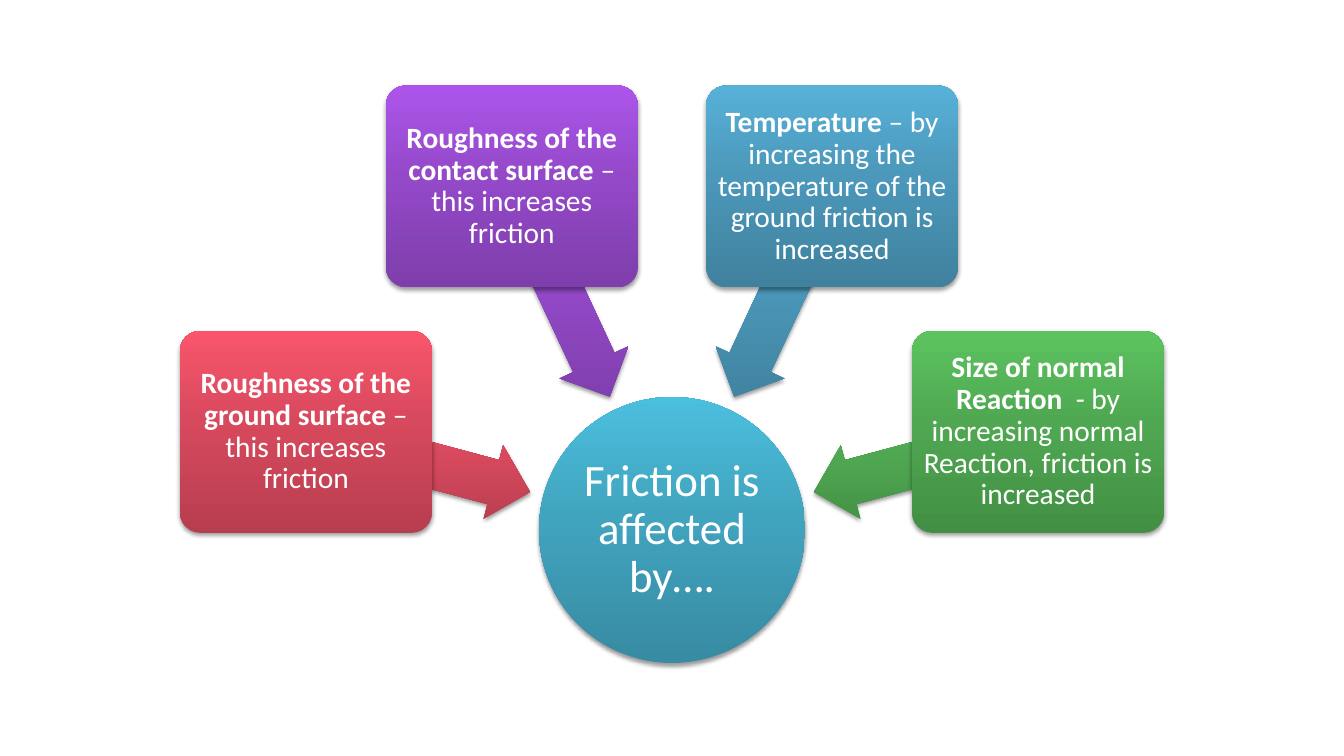
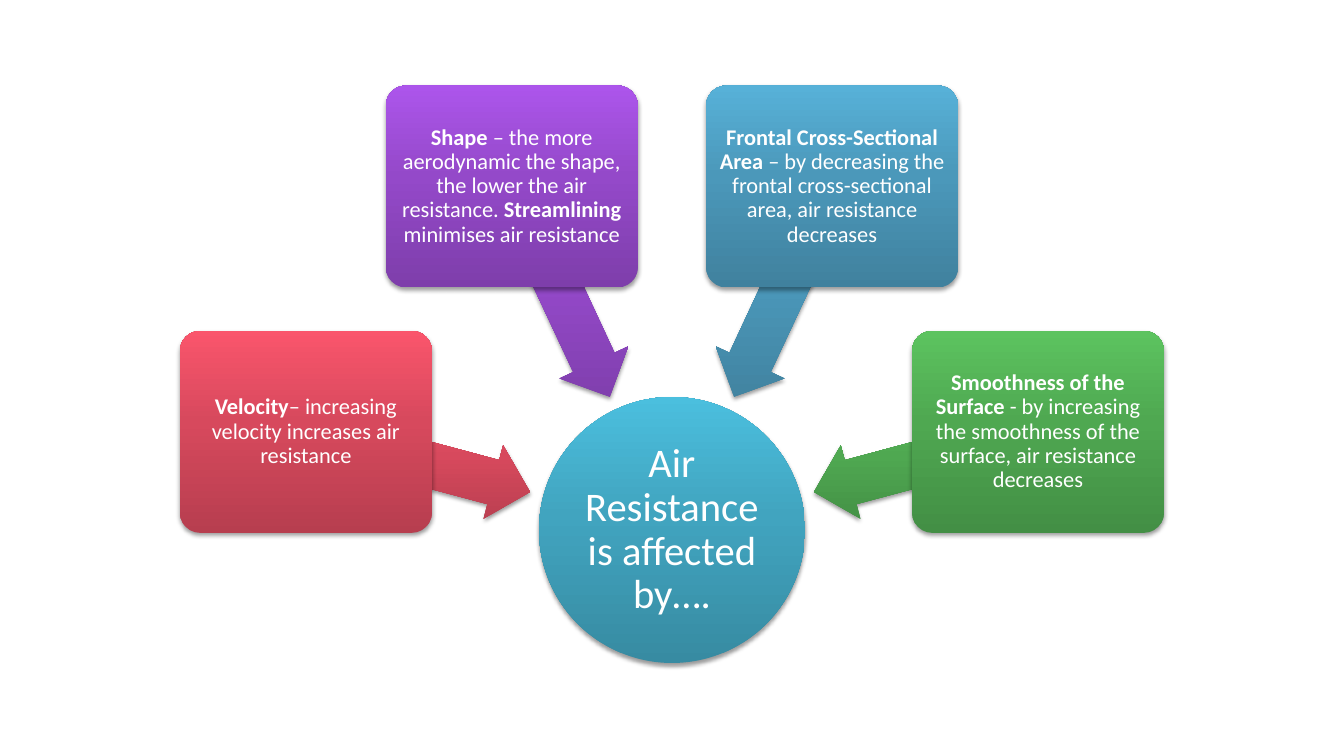
"""Builds two radial diagrams of what affects friction and air resistance."""
import copy
import math

import pptx
import pptx.dml.color
import pptx.enum.shapes
import pptx.enum.text
import pptx.oxml
import pptx.oxml.ns
import pptx.util

RGB = pptx.dml.color.RGBColor
SHAPE = pptx.enum.shapes.MSO_SHAPE
qn = pptx.oxml.ns.qn

PX = 914400 / 100.8
FONT = "Calibri"
WHITE = RGB(0xFF, 0xFF, 0xFF)
TEAL = (RGB(0x37, 0x8B, 0xA2), RGB(0x41, 0xA4, 0xBF), RGB(0x4B, 0xBF, 0xDE))
RED = (RGB(0xB7, 0x3E, 0x4F), RGB(0xD7, 0x49, 0x5D), RGB(0xFA, 0x55, 0x6C))
PURPLE = (RGB(0x7E, 0x3E, 0xAB), RGB(0x94, 0x49, 0xC9), RGB(0xAC, 0x55, 0xEB))
BLUE = (RGB(0x40, 0x81, 0x9E), RGB(0x4B, 0x98, 0xBA), RGB(0x57, 0xB1, 0xD8))
GREEN = (RGB(0x43, 0x8F, 0x45), RGB(0x4F, 0xA8, 0x51), RGB(0x5C, 0xC3, 0x5F))
STOPS = (0, 0.55, 1)
SHADOW = (
    f'<a:outerShdw {pptx.oxml.ns.nsdecls("a")} blurRad="{pptx.util.Pt(3.1)}" '
    f'dist="{pptx.util.Pt(2)}" dir="5400000" rotWithShape="0">'
    '<a:srgbClr val="000000"><a:alpha val="38000"/></a:srgbClr></a:outerShdw>'
)

HUB_X, HUB_Y, HUB_SIZE = 672, 530, 266
BOX_W, BOX_H, BOX_RADIUS = 252, 202, 379
ARROW_W, ARROW_H, ARROW_RADIUS = 232, 76, 263
SPOKES = ((195, RED), (245, PURPLE), (295, BLUE), (345, GREEN))

DIAGRAMS = [
    {
        "hub": "Friction is affected by….", "hub_size": 32,
        "size": 21, "inset": 4,
        "factors": [
            ("Roughness of the ground surface ", "– this increases friction"),
            ("Roughness of the contact surface ", "– this increases friction"),
            ("Temperature", " – by increasing the temperature of the ground "
             "friction is increased"),
            ("Size of normal Reaction ", " - by increasing normal Reaction, "
             "friction is increased"),
        ],
    },
    {
        "hub": "Air Resistance is affected by….", "hub_size": 29,
        "size": 16, "inset": 3,
        "factors": [
            ("Velocity", "– increasing velocity increases air resistance"),
            ("Shape ", "– the more aerodynamic the shape, the lower the air "
             "resistance. ", "Streamlining ", "minimises air resistance"),
            ("Frontal Cross-Sectional Area ", "– by decreasing the frontal "
             "cross-sectional area, air resistance decreases"),
            ("Smoothness of the Surface ", "- by increasing the smoothness of "
             "the surface, air resistance decreases"),
        ],
    },
]


def add_part(s, kind, angle, radius, w, h, colors, adjustments=()):
    x = HUB_X + radius * math.cos(math.radians(angle)) - w / 2
    y = HUB_Y + radius * math.sin(math.radians(angle)) - h / 2
    sp = s.shapes.add_shape(kind, *(round(v * PX) for v in (x, y, w, h)))
    for i, value in enumerate(adjustments):
        sp.adjustments[i] = value
    sp.line.fill.background()
    sp.fill.gradient()
    sp.fill.gradient_angle = 90
    spPr = sp._element.spPr
    spPr.find(qn("a:gradFill")).set("rotWithShape", "0")
    stops = spPr.find(".//" + qn("a:gsLst"))
    stops.append(copy.deepcopy(stops[0]))
    for stop, position, color in zip(sp.fill.gradient_stops, STOPS, colors):
        stop.position = position
        stop.color.rgb = color
    sp.shadow.inherit = False
    spPr.find(qn("a:effectLst")).append(pptx.oxml.parse_xml(SHADOW))
    return sp


def write_text(sp, size, inset, parts):
    tf = sp.text_frame
    tf.word_wrap = True
    tf.vertical_anchor = pptx.enum.text.MSO_ANCHOR.MIDDLE
    margin = round(inset * PX)
    tf.margin_left = tf.margin_top = tf.margin_right = tf.margin_bottom = margin
    p = tf.paragraphs[0]
    p.alignment = pptx.enum.text.PP_ALIGN.CENTER
    p.line_spacing = 0.9
    p.font.name = FONT
    p.font.size = pptx.util.Pt(size)
    p.font.color.rgb = WHITE
    for i, text in enumerate(parts):
        r = p.add_run()
        r.text = text
        r.font.bold = len(parts) > 1 and i % 2 == 0


prs = pptx.Presentation()
prs.slide_width = round(1344 * PX)
prs.slide_height = round(756 * PX)

for diagram in DIAGRAMS:
    s = prs.slides.add_slide(prs.slide_layouts[6])
    hub = add_part(s, SHAPE.OVAL, 0, 0, HUB_SIZE, HUB_SIZE, TEAL)
    write_text(hub, diagram["hub_size"], 2, [diagram["hub"]])
    for (angle, colors), factor in zip(SPOKES, diagram["factors"]):
        arrow = add_part(s, SHAPE.LEFT_ARROW, angle, ARROW_RADIUS,
                         ARROW_W, ARROW_H, colors, (0.6, 0.5))
        arrow.rotation = angle
        box = add_part(s, SHAPE.ROUNDED_RECTANGLE, angle, BOX_RADIUS,
                       BOX_W, BOX_H, colors, (0.1,))
        write_text(box, diagram["size"], diagram["inset"], factor)

prs.save("out.pptx")
